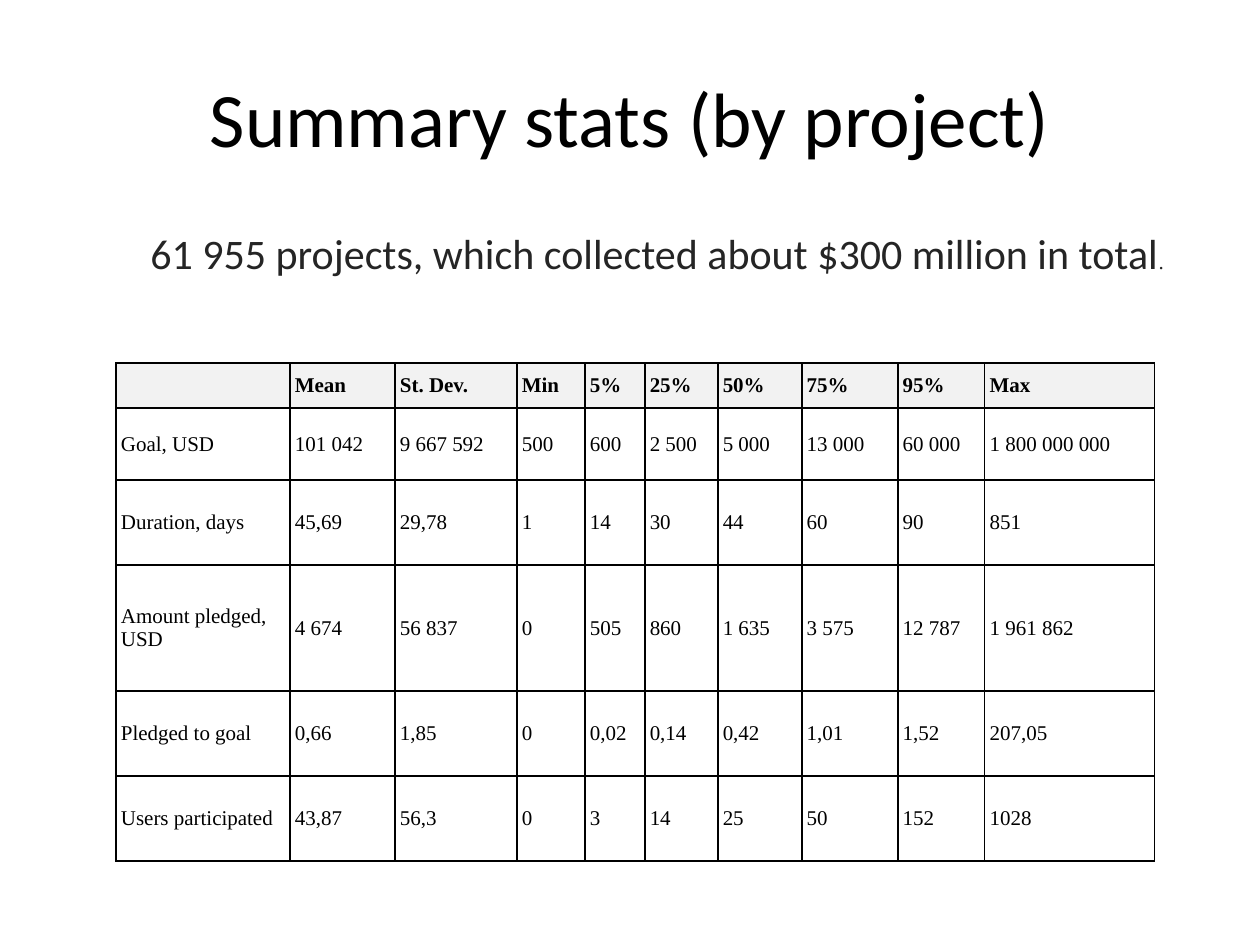
from lxml import etree
from pptx import Presentation
from pptx.dml.color import RGBColor
from pptx.enum.text import MSO_ANCHOR, MSO_AUTO_SIZE, PP_ALIGN
from pptx.oxml.ns import qn
from pptx.util import Pt

PX = 914400 / 126
BLACK = RGBColor(0x00, 0x00, 0x00)
CHARCOAL = RGBColor(0x25, 0x25, 0x25)
HEADER_GREY = RGBColor(0xF2, 0xF2, 0xF2)

COLUMN_WIDTHS = [174, 105, 122, 68, 60, 73, 84, 96, 87, 170]
ROW_HEIGHTS = [45, 72, 85, 126, 85, 85]
STATS = [
    ["", "Mean", "St. Dev.", "Min", "5%", "25%", "50%", "75%", "95%", "Max"],
    ["Goal, USD", "101 042", "9 667 592", "500", "600", "2 500", "5 000",
     "13 000", "60 000", "1 800 000 000"],
    ["Duration, days", "45,69", "29,78", "1", "14", "30", "44", "60", "90", "851"],
    ["Amount pledged, USD", "4 674", "56 837", "0", "505", "860", "1 635",
     "3 575", "12 787", "1 961 862"],
    ["Pledged to goal", "0,66", "1,85", "0", "0,02", "0,14", "0,42", "1,01",
     "1,52", "207,05"],
    ["Users participated", "43,87", "56,3", "0", "3", "14", "25", "50", "152",
     "1028"],
]


def px(length):
    return round(length * PX)


def format_run(run, font_name, size, color, bold=False):
    run.font.name = font_name
    run.font.size = Pt(size)
    run.font.color.rgb = color
    run.font.bold = bold


def place_title(slide, left, top, width, height):
    title = slide.shapes.title
    title.left, title.top = px(left), px(top)
    title.width, title.height = px(width), px(height)
    frame = title.text_frame
    frame.text = "Summary stats (by project)"
    frame.vertical_anchor = MSO_ANCHOR.MIDDLE
    paragraph = frame.paragraphs[0]
    paragraph.alignment = PP_ALIGN.CENTER
    format_run(paragraph.runs[0], "Calibri", 44, BLACK)


def add_borders(cell):
    properties = cell._tc.get_or_add_tcPr()
    for position, side in enumerate(("a:lnL", "a:lnR", "a:lnT", "a:lnB")):
        line = etree.Element(qn(side), w=str(Pt(1)))
        fill = etree.SubElement(line, qn("a:solidFill"))
        etree.SubElement(fill, qn("a:srgbClr"), val=str(BLACK))
        properties.insert(position, line)


def format_cell(cell, text, is_header):
    cell.text = text
    cell.vertical_anchor = MSO_ANCHOR.MIDDLE
    cell.margin_left = cell.margin_right = px(5)
    cell.margin_top = cell.margin_bottom = 0
    if is_header:
        cell.fill.solid()
        cell.fill.fore_color.rgb = HEADER_GREY
    else:
        cell.fill.background()
    for run in cell.text_frame.paragraphs[0].runs:
        format_run(run, "Times New Roman", 12, BLACK, is_header)
    add_borders(cell)


def add_stats_table(slide, left, top):
    table = slide.shapes.add_table(
        len(ROW_HEIGHTS), len(COLUMN_WIDTHS), px(left), px(top),
        px(sum(COLUMN_WIDTHS)), px(sum(ROW_HEIGHTS))).table
    table.horz_banding = False
    for column, width in zip(table.columns, COLUMN_WIDTHS):
        column.width = px(width)
    for row_index, (row, height) in enumerate(zip(table.rows, ROW_HEIGHTS)):
        row.height = px(height)
        for cell, text in zip(row.cells, STATS[row_index]):
            format_cell(cell, text, row_index == 0)


def add_project_total(slide, left, top, width, height):
    box = slide.shapes.add_textbox(px(left), px(top), px(width), px(height))
    frame = box.text_frame
    frame.word_wrap = False
    frame.auto_size = MSO_AUTO_SIZE.SHAPE_TO_FIT_TEXT
    frame.vertical_anchor = MSO_ANCHOR.MIDDLE
    paragraph = frame.paragraphs[0]
    paragraph.text = "61 955 projects, which collected about $300 million in total"
    format_run(paragraph.runs[0], "Calibri", 24, CHARCOAL)
    full_stop = paragraph.add_run()
    full_stop.text = "."
    format_run(full_stop, "Times New Roman", 12, CHARCOAL)
    paragraph._p.get_or_add_pPr().set("indent", str(px(62)))


def main():
    presentation = Presentation()
    presentation.slide_width, presentation.slide_height = px(1260), px(945)
    slide = presentation.slides.add_slide(presentation.slide_layouts[5])
    place_title(slide, 63, 38, 1134, 157)
    add_stats_table(slide, 116, 363)
    add_project_total(slide, 76, 221, 1110, 63)
    presentation.save("out.pptx")


if __name__ == "__main__":
    main()
